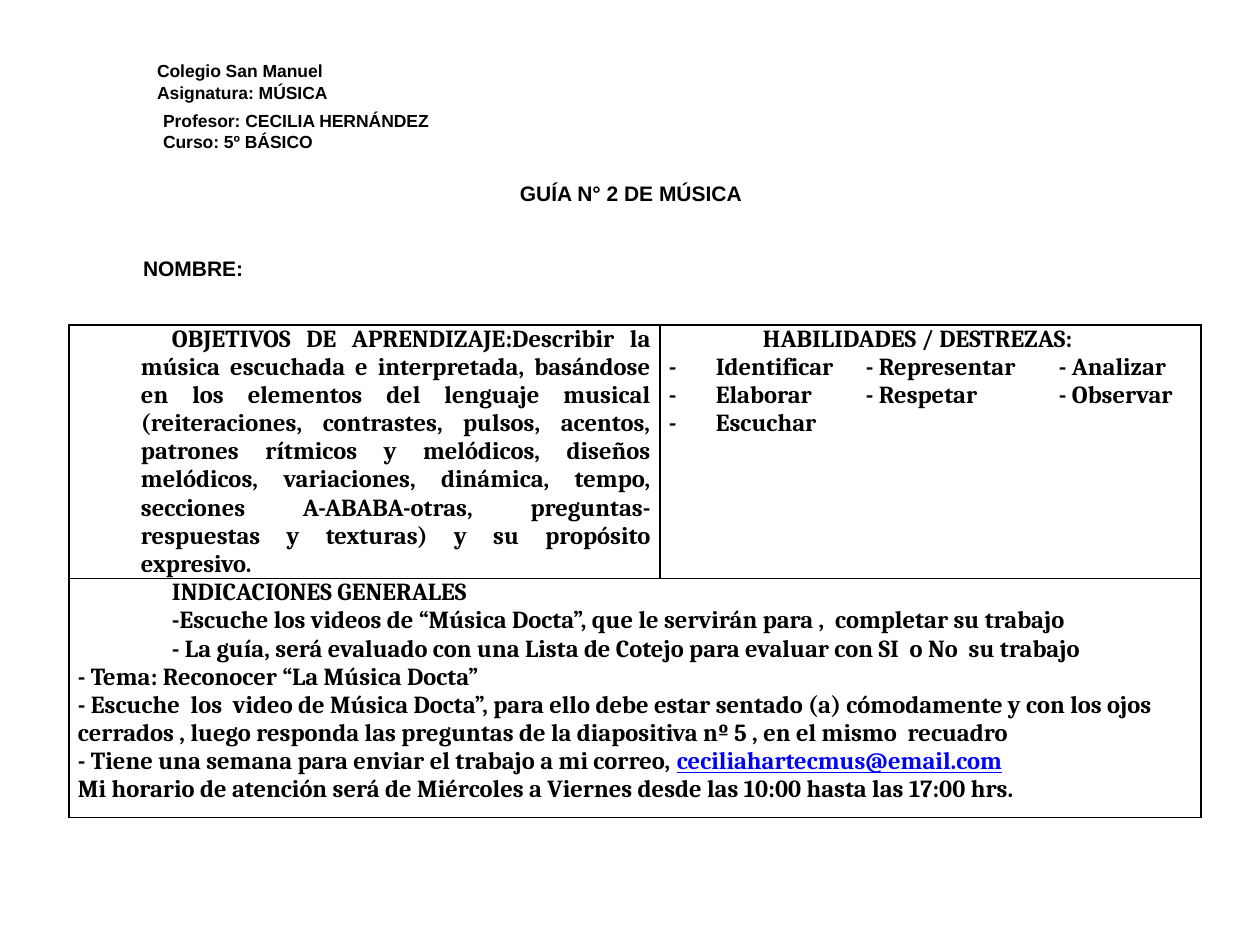
from dataclasses import dataclass

from lxml.etree import SubElement
from pptx import Presentation
from pptx.dml.color import RGBColor
from pptx.enum.text import MSO_ANCHOR, MSO_AUTO_SIZE, PP_ALIGN
from pptx.oxml import parse_xml
from pptx.oxml.ns import nsdecls, qn
from pptx.util import Emu, Pt

PX = 914400 // 126  # EMU per px
BLACK, LINK = "000000", "0000FF"


@dataclass
class Box:
    x: int
    y: int
    w: int
    h: int

    def emu(self) -> list[Emu]:
        return [px(v) for v in (self.x, self.y, self.w, self.h)]


@dataclass
class Para:
    text: str
    left: int = 0
    first: int = 0
    align: PP_ALIGN = PP_ALIGN.LEFT
    tabs: tuple[int, ...] = ()
    before: int = 0
    spacing: float | None = None
    link: str = ""


def px(n: int) -> Emu:
    return Emu(n * PX)


def color(hex_code: str) -> RGBColor:
    return RGBColor.from_string(hex_code)


def add_text(p, text: str, *, font: str, size: int, fill: str = BLACK,
             underline: bool = False) -> None:
    r = p.add_run()
    r.text = text
    r.font.name, r.font.size, r.font.bold = font, Pt(size), True
    r.font.color.rgb = color(fill)
    if underline:
        r.font.underline = True


def write(tf, paras: list[Para], *, font: str, size: int) -> None:
    for i, para in enumerate(paras):
        p = tf.add_paragraph() if i else tf.paragraphs[0]
        pPr = p._p.get_or_add_pPr()
        if para.left or para.first:
            pPr.set("marL", str(px(para.left)))
            pPr.set("indent", str(px(para.first)))
        if para.tabs:
            tab_list = SubElement(pPr, qn("a:tabLst"))
            for pos in para.tabs:
                SubElement(tab_list, qn("a:tab"), pos=str(px(pos)), algn="l")
        p.alignment = para.align
        if para.before:
            p.space_before = px(para.before)
        if para.spacing:
            p.line_spacing = Pt(para.spacing)
        add_text(p, para.text, font=font, size=size)
        if para.link:
            add_text(p, para.link, font=font, size=size, fill=LINK, underline=True)


def setup_frame(tf) -> None:
    tf.word_wrap = True
    tf.auto_size = MSO_AUTO_SIZE.NONE
    tf.vertical_anchor = MSO_ANCHOR.TOP
    tf.margin_left = tf.margin_right = tf.margin_top = tf.margin_bottom = 0


def add_box(s, box: Box, paras: list[Para], size: int) -> None:
    tf = s.shapes.add_textbox(*box.emu()).text_frame
    setup_frame(tf)
    write(tf, paras, font="Arial", size=size)


def format_cell(cell) -> None:
    cell.margin_left = cell.margin_right = px(9)
    cell.margin_top = cell.margin_bottom = 0
    cell.fill.background()
    tcPr = cell._tc.get_or_add_tcPr()
    for i, side in enumerate(("lnL", "lnR", "lnT", "lnB")):
        tcPr.insert(i, parse_xml(
            f'<a:{side} {nsdecls("a")} w="{Pt(1)}"><a:solidFill>'
            f'<a:srgbClr val="{BLACK}"/></a:solidFill></a:{side}>'))


def indented(text: str) -> Para:
    return Para(text, left=63, first=31, align=PP_ALIGN.JUSTIFY)


def skill(text: str) -> Para:
    return Para(f"-\t{text}", tabs=(47, 197, 390))


HEADER = [
    Para("Colegio San Manuel", spacing=12.5),
    Para("Asignatura: MÚSICA", spacing=12.5),
    Para("Profesor: CECILIA HERNÁNDEZ", left=6, before=6, spacing=12.5),
    Para("Curso: 5º BÁSICO", left=6, spacing=12.5),
]
OBJECTIVES = [indented(
    "OBJETIVOS DE APRENDIZAJE:Describir la música escuchada e interpretada, "
    "basándose en los elementos del lenguaje musical (reiteraciones, contrastes, "
    "pulsos, acentos, patrones rítmicos y melódicos, diseños melódicos, "
    "variaciones, dinámica, tempo, secciones A-ABABA-otras, preguntas-respuestas "
    "y texturas) y su propósito expresivo.")]
SKILLS = [
    indented("HABILIDADES / DESTREZAS:"),
    skill("Identificar\t- Representar\t- Analizar"),
    skill("Elaborar\t- Respetar\t- Observar"),
    skill("Escuchar"),
]
INSTRUCTIONS = [
    indented("INDICACIONES GENERALES"),
    indented("-Escuche los videos de “Música Docta”, que le servirán para ,  "
             "completar su trabajo"),
    indented("- La guía, será evaluado con una Lista de Cotejo para evaluar con "
             "SI  o No  su trabajo"),
    Para("- Tema: Reconocer “La Música Docta”"),
    Para("- Escuche  los  video de Música Docta”, para ello debe estar sentado (a) "
         "cómodamente y con los ojos cerrados , luego responda las preguntas de la "
         "diapositiva nº 5 , en el mismo  recuadro"),
    Para("- Tiene una semana para enviar el trabajo a mi correo, ",
         link="ceciliahartecmus@email.com"),
    Para("Mi horario de atención será de Miércoles a Viernes desde las 10:00 "
         "hasta las 17:00 hrs."),
]


def add_guide_table(s, box: Box, cols: list[int], rows: list[int]) -> None:
    frame = s.shapes.add_table(len(rows), len(cols), *box.emu())
    table = frame.table
    table.first_row = table.horz_banding = False
    for col, width in zip(table.columns, cols):
        col.width = px(width)
    for row, height in zip(table.rows, rows):
        row.height = px(height)
    for cell in table.iter_cells():
        format_cell(cell)
    table.cell(1, 0).merge(table.cell(1, 1))
    contents = {(0, 0): OBJECTIVES, (0, 1): SKILLS, (1, 0): INSTRUCTIONS}
    for pos, paras in contents.items():
        write(table.cell(*pos).text_frame, paras, font="Cambria", size=14)


def main() -> None:
    prs = Presentation()
    prs.slide_width, prs.slide_height = px(1260), px(945)
    s = prs.slides.add_slide(prs.slide_layouts[5])

    # Title
    title = s.shapes.title
    title.left, title.top, title.width, title.height = Box(131, 180, 1000, 24).emu()
    setup_frame(title.text_frame)
    write(title.text_frame, [Para("GUÍA N° 2 DE MÚSICA", align=PP_ALIGN.CENTER)],
          font="Arial", size=12)

    # School details and name line
    add_box(s, Box(157, 59, 500, 96), HEADER, size=10)
    add_box(s, Box(143, 256, 500, 24), [Para("NOMBRE:")], size=12)

    # Objectives, skills and instructions
    add_guide_table(s, Box(69, 325, 1132, 492), cols=[591, 541], rows=[253, 239])

    prs.save("out.pptx")


if __name__ == "__main__":
    main()
